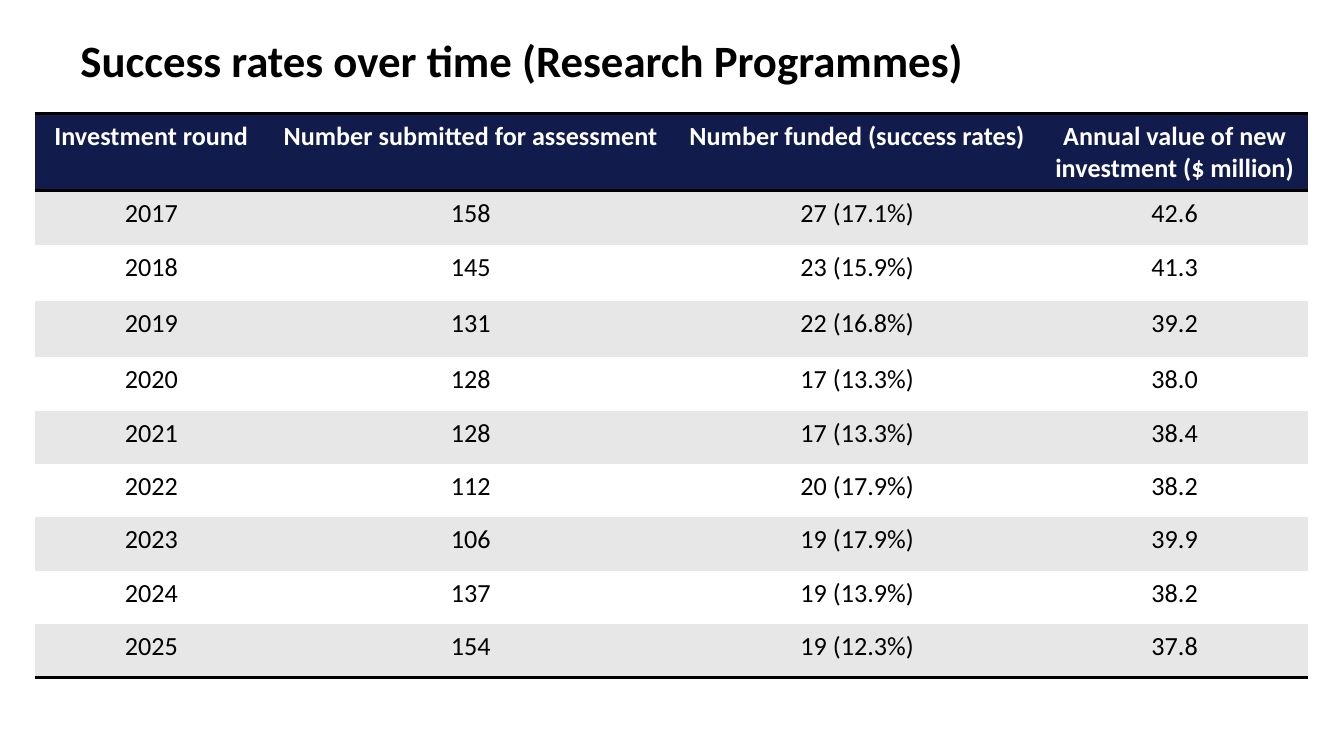
from typing import NamedTuple

from lxml.etree import SubElement
from pptx import Presentation
from pptx.dml.color import RGBColor
from pptx.enum.text import MSO_ANCHOR, PP_ALIGN
from pptx.oxml.ns import qn
from pptx.util import Cm, Pt

FONT = "Calibri"
BLACK, WHITE, NAVY, GREY = "000000", "FFFFFF", "111C4D", "E7E7E7"
NO_STYLE = "{2D5ABB26-0587-4C30-8999-92F81FD0307C}"


class Round(NamedTuple):
    year: str
    submitted: str
    funded: str
    value: str


HEADINGS = Round(
    "Investment round",
    "Number submitted for assessment",
    "Number funded (success rates)",
    "Annual value of new investment ($ million)",
)
ROUNDS = [
    Round("2017", "158", "27 (17.1%)", "42.6"),
    Round("2018", "145", "23 (15.9%)", "41.3"),
    Round("2019", "131", "22 (16.8%)", "39.2"),
    Round("2020", "128", "17 (13.3%)", "38.0"),
    Round("2021", "128", "17 (13.3%)", "38.4"),
    Round("2022", "112", "20 (17.9%)", "38.2"),
    Round("2023", "106", "19 (17.9%)", "39.9"),
    Round("2024", "137", "19 (13.9%)", "38.2"),
    Round("2025", "154", "19 (12.3%)", "37.8"),
]
COLUMN_WIDTHS = [4.4, 7.67, 6.94, 5.06]
ROW_HEIGHTS = [1.45, 1.03, 1.06, 1.06] + [1.01] * 6


def colour(value: str) -> RGBColor:
    return RGBColor.from_string(value)


def set_font(paragraph, size: float, hex_colour: str, bold: bool) -> None:
    font = paragraph.font
    font.name, font.size, font.bold = FONT, Pt(size), bold
    font.color.rgb = colour(hex_colour)


def add_border(cell, side: str) -> None:
    """Rule one side of a cell: side is lnT (top) or lnB (bottom)."""
    properties = cell._tc.get_or_add_tcPr()
    line = SubElement(properties, qn(f"a:{side}"), w=str(Pt(2)))
    fill = SubElement(line, qn("a:solidFill"))
    SubElement(fill, qn("a:srgbClr"), val=BLACK)


def add_title(page, text: str) -> None:
    box = page.shapes.add_textbox(Cm(1.27), Cm(0), Cm(22.86), Cm(2.39))
    frame = box.text_frame
    frame.word_wrap = True
    frame.vertical_anchor = MSO_ANCHOR.MIDDLE
    paragraph = frame.paragraphs[0]
    paragraph.text = text
    paragraph.line_spacing = 0.9
    set_font(paragraph, 24, BLACK, True)


def fill_cell(cell, text: str, background: str, borders: list[str], heading: bool) -> None:
    for side in borders:
        add_border(cell, side)
    cell.fill.solid()
    cell.fill.fore_color.rgb = colour(background)
    paragraph = cell.text_frame.paragraphs[0]
    paragraph.text = text
    paragraph.alignment = PP_ALIGN.CENTER
    set_font(paragraph, 14, WHITE if heading else BLACK, heading)


def add_rounds_table(page, rows: list[Round]) -> None:
    table = page.shapes.add_table(
        len(rows), len(COLUMN_WIDTHS), Cm(0.66), Cm(2.15),
        Cm(sum(COLUMN_WIDTHS)), Cm(sum(ROW_HEIGHTS)),
    ).table
    table._tbl.tblPr.find(qn("a:tableStyleId")).text = NO_STYLE
    for column, width in zip(table.columns, COLUMN_WIDTHS):
        column.width = Cm(width)
    for row, height in zip(table.rows, ROW_HEIGHTS):
        row.height = Cm(height)

    # Navy heading, then alternating grey and white rows
    for index, entry in enumerate(rows):
        heading = index == 0
        background = NAVY if heading else GREY if index % 2 else WHITE
        borders = ["lnT", "lnB"] if heading else ["lnB"] if index == len(rows) - 1 else []
        for cell, text in zip(table.rows[index].cells, entry):
            fill_cell(cell, text, background, borders, heading)


def main() -> None:
    deck = Presentation()
    deck.slide_width, deck.slide_height = Cm(25.4), Cm(14.29)
    page = deck.slides.add_slide(deck.slide_layouts[6])
    add_title(page, "Success rates over time (Research Programmes)")
    add_rounds_table(page, [HEADINGS, *ROUNDS])
    deck.save("out.pptx")


if __name__ == "__main__":
    main()
